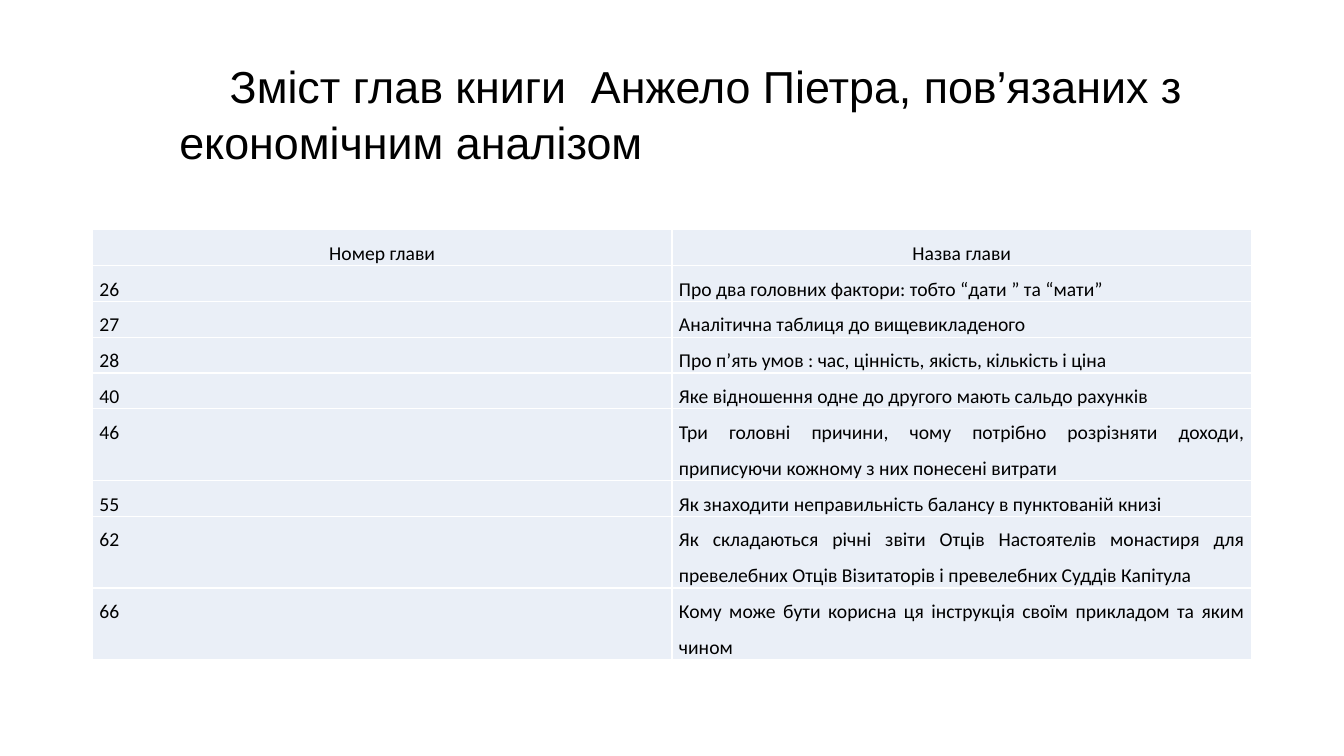
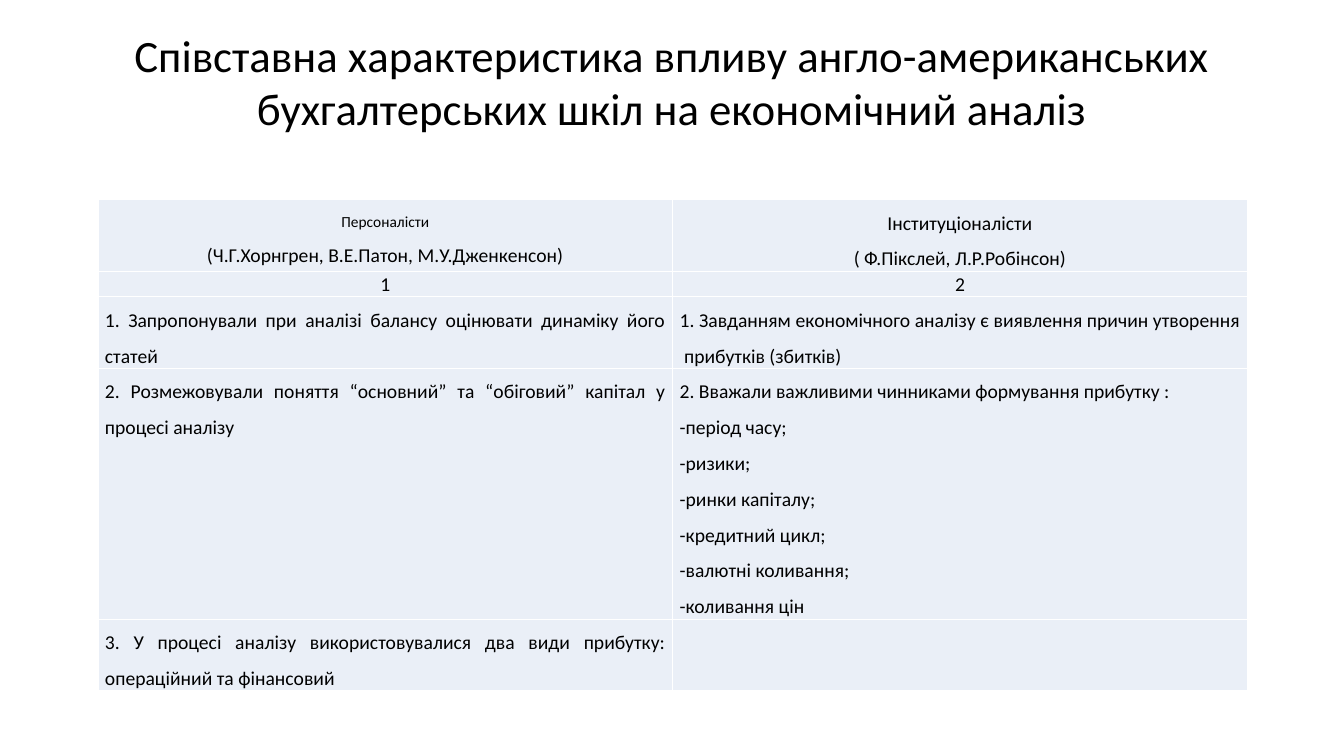
from lxml import etree
from pptx import Presentation
from pptx.dml.color import RGBColor
from pptx.enum.text import MSO_ANCHOR, PP_ALIGN
from pptx.oxml.ns import qn
from pptx.util import Pt

LEFT, MID, JUST = PP_ALIGN.LEFT, PP_ALIGN.CENTER, PP_ALIGN.JUSTIFY
TOP, HALF = MSO_ANCHOR.TOP, MSO_ANCHOR.MIDDLE
HUE = {"ink": "000000", "cell": "EAEFF7", "line": "FFFFFF"}
LINE = 25.6
HEAD = dict(align=MID, anchor=HALF)

BOOK = [
    ("Номер глави", "Назва глави"),
    ("26", "Про два головних фактори: тобто “дати ” та “мати”"),
    ("27", "Аналітична таблиця до вищевикладеного"),
    ("28", "Про п’ять умов : час, цінність, якість, кількість і ціна"),
    ("40", "Яке відношення одне до другого мають сальдо рахунків"),
    ("46", "Три головні причини, чому потрібно розрізняти доходи, "
           "приписуючи кожному з них понесені витрати"),
    ("55", "Як знаходити неправильність балансу в пунктованій книзі"),
    ("62", "Як складаються річні звіти Отців Настоятелів монастиря для "
           "превелебних Отців Візитаторів і превелебних Суддів Капітула"),
    ("66", "Кому може бути корисна ця інструкція своїм прикладом та яким чином"),
]
SCHOOLS = [
    ("Персоналісти\n(Ч.Г.Хорнгрен, В.Е.Патон, М.У.Дженкенсон)",
     "Інституціоналісти\n( Ф.Пікслей, Л.Р.Робінсон)"),
    ("1", "2"),
    ("1. Запропонували при аналізі балансу оцінювати динаміку його статей",
     "1. Завданням економічного аналізу є виявлення причин утворення  прибутків (збитків)"),
    ("2. Розмежовували поняття “основний” та “обіговий” капітал у процесі аналізу",
     "2. Вважали важливими чинниками формування прибутку :\n-період часу;\n-ризики;\n"
     "-ринки капіталу;\n-кредитний цикл;\n-валютні коливання;\n-коливання цін"),
    ("3. У процесі аналізу використовувалися два види прибутку: "
     "операційний та фінансовий", ""),
]


def write(frame, text, size=14, font="Calibri", align=JUST, space=1.5, indent=0):
    """Fill a text frame with one paragraph for each line of text."""
    for i, line in enumerate(text.split("\n")):
        para = frame.add_paragraph() if i else frame.paragraphs[0]
        para.alignment, para.line_spacing = align, space
        if indent:
            para._p.get_or_add_pPr().set("indent", str(Pt(indent)))
        if line:
            run = para.add_run()
            run.text = line
            run.font.size, run.font.name = Pt(size), font
            run.font.color.rgb = RGBColor.from_string(HUE["ink"])


def title(slide, box, text, **style):
    """Place a slide title, centred vertically in its box."""
    frame = slide.shapes.add_textbox(*map(Pt, box)).text_frame
    frame.word_wrap, frame.vertical_anchor = True, HALF
    frame.margin_top = frame.margin_bottom = 0
    write(frame, text, size=32, **style)


def edge(cell):
    """Draw thin lines on all four sides of a cell."""
    props = cell._tc.get_or_add_tcPr()
    for side in ("a:lnL", "a:lnR", "a:lnT", "a:lnB"):
        line = etree.SubElement(props, qn(side), w=str(Pt(1)))
        fill = etree.SubElement(line, qn("a:solidFill"))
        etree.SubElement(fill, qn("a:srgbClr"), val=HUE["line"])


def grid(slide, left, top, width, rows, highs, styles):
    """Place a table of equal columns, with styles for the rows that differ."""
    cols = len(rows[0])
    table = slide.shapes.add_table(
        len(rows), cols, Pt(left), Pt(top), Pt(width), Pt(sum(highs))).table
    table.first_row = table.horz_banding = False
    for r, (texts, high) in enumerate(zip(rows, highs)):
        table.rows[r].height = Pt(high)
        style = dict(styles.get(r, {}))
        anchor = style.pop("anchor", TOP)
        for c, text in enumerate(texts):
            cell = table.cell(r, c)
            cell.margin_left = cell.margin_right = Pt(5)
            cell.margin_top = cell.margin_bottom = 0
            cell.vertical_anchor = anchor
            edge(cell)
            cell.fill.solid()
            cell.fill.fore_color.rgb = RGBColor.from_string(HUE["cell"])
            write(cell.text_frame, text, **style)
    return table


def book(slide):
    """Build the slide that lists the chapters."""
    title(slide, (121, 28, 828, 104),
          "Зміст глав книги  Анжело Піетра, пов’язаних з економічним аналізом",
          font="Arial", align=LEFT, space=1.05, indent=36)
    highs = [LINE * (2 if len(name) > 60 else 1) for _, name in BOOK]
    grid(slide, 66, 164, 828, BOOK, highs, {0: dict(align=MID)})


def schools(slide):
    """Build the slide that compares the two schools."""
    highs = [2 * LINE, 18.3, 2 * LINE, 7 * LINE, 2 * LINE]
    table = grid(slide, 70, 142.5, 821, SCHOOLS, highs,
                 {0: HEAD, 1: dict(align=MID, space=1.07)})
    first = table.cell(0, 0).text_frame.paragraphs[0]
    first.runs[0].font.size = Pt(11)
    title(slide, (85, 19, 790, 78),
          "Співставна характеристика впливу англо-американських\n"
          "бухгалтерських шкіл на економічний аналіз", align=MID, space=1.0)


def main():
    """Build and save the slides."""
    deck = Presentation()
    deck.slide_width, deck.slide_height = Pt(960), Pt(540)
    for build in (book, schools):
        build(deck.slides.add_slide(deck.slide_layouts[6]))
    deck.save("out.pptx")


if __name__ == "__main__":
    main()
